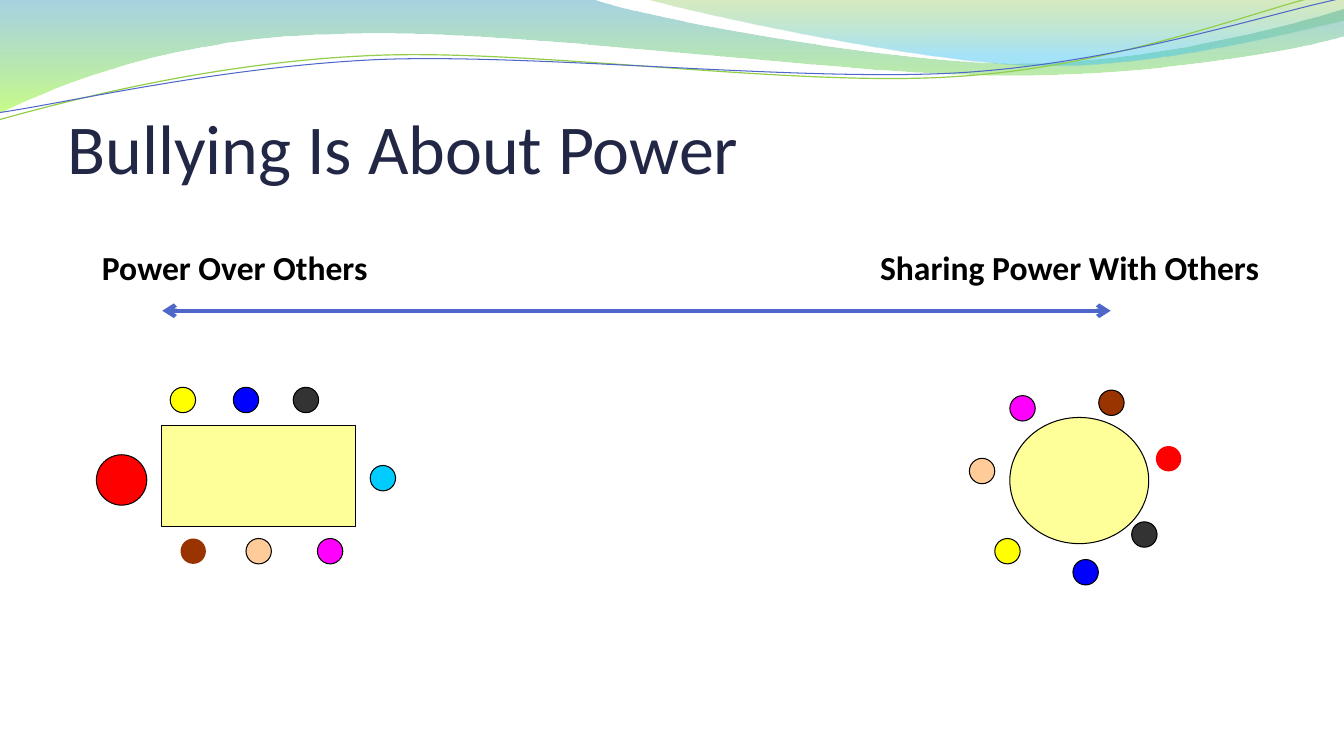
from dataclasses import dataclass
from math import cos, radians, sin

from lxml import etree
from pptx import Presentation
from pptx.dml.color import RGBColor
from pptx.enum.shapes import MSO_CONNECTOR, MSO_SHAPE
from pptx.enum.text import MSO_ANCHOR
from pptx.oxml.ns import qn
from pptx.util import Cm, Pt

RECTANGLE = MSO_SHAPE.RECTANGLE
OVAL = MSO_SHAPE.OVAL
STRAIGHT = MSO_CONNECTOR.STRAIGHT
ANCHOR_TOP = MSO_ANCHOR.TOP
ANCHOR_BOTTOM = MSO_ANCHOR.BOTTOM


@dataclass(frozen=True)
class Theme:
    font: str = "Calibri"
    title_size: float = 50
    label_size: float = 24
    outline: float = 0.75
    green_line: float = 0.85
    arrow: float = 3
    title: str = "212745"
    black: str = "000000"
    accent: str = "4E67C8"
    leaf: str = "93CE48"
    table: str = "FFFF99"
    red: str = "FF0000"
    yellow: str = "FFFF00"
    blue: str = "0000FF"
    charcoal: str = "333333"
    brown: str = "993300"
    peach: str = "FFCC99"
    magenta: str = "FF00FF"
    cyan: str = "00CCFF"
    back_wave: tuple = ((0, "3B9CBF", 45), (100, "9CFA24", 55))
    front_wave: tuple = ((0, "7EBE2C", 30), (80, "39C1F1", 45))


THEME = Theme()
SEAT_SIZE = 0.64
CURVE_TILT = 2.7

BACK_WAVE = [
    [(0, 0)],
    [(14.91, -0.03)],
    [(16.1, 0.43), (22.45, 1.6), (25.68, 1.6)],
    [(28.88, 1.6), (32.44, 0.66), (33.86, 0.23)],
    [(33.88, 0.91)],
    [(33.3, 1.12), (29.44, 1.93), (25.25, 1.9)],
    [(21.06, 1.9), (12.93, 0.71), (8.71, 0.86)],
    [(4.37, 0.91), (1.55, 2.11), (-0.05, 2.87)],
]
FRONT_WAVE = [
    [(16.21, -0.03)],
    [(17.25, 0.28), (23.09, 1.57), (26.04, 1.65)],
    [(28.96, 1.75), (32.56, 0.81), (33.86, 0.53)],
    [(33.86, 0)],
]
GREEN_LINE = [
    [(-0.03, 3.02)],
    [(1.6, 2.57), (5.33, 1.57), (9.37, 1.4)],
    [(13.39, 1.22), (20.04, 2.21), (24.1, 1.93)],
    [(28.19, 1.68), (31.78, 0.2), (33.78, -0.25)],
]
BLUE_LINE = [
    [(-0.03, 2.84)],
    [(1.57, 2.62), (5.54, 1.68), (9.58, 1.5)],
    [(13.64, 1.35), (20.22, 2.08), (24.26, 1.83)],
    [(28.3, 1.57), (31.88, 0.36), (33.86, -0.05)],
]

TOP_ROW, BOTTOM_ROW = 9.76, 13.57
LONG_TABLE_SEATS = [
    (4.29, TOP_ROW, THEME.yellow, True),
    (5.88, TOP_ROW, THEME.blue, True),
    (4.55, BOTTOM_ROW, THEME.brown, False),
    (6.2, BOTTOM_ROW, THEME.peach, True),
    (8, BOTTOM_ROW, THEME.magenta, True),
    (7.39, TOP_ROW, THEME.charcoal, True),
    (9.33, 11.73, THEME.cyan, True),
]
ROUND_TABLE_SEATS = [
    (25.45, 9.97, THEME.magenta, True),
    (24.43, 11.55, THEME.peach, True),
    (25.07, BOTTOM_ROW, THEME.yellow, True),
    (27.04, 14.1, THEME.blue, True),
    (27.69, 9.83, THEME.brown, True),
    (29.13, 11.24, THEME.red, False),
    (28.52, 13.15, THEME.charcoal, True),
]


def tilt(segments, center, degrees):
    center_x, center_y = center
    cosine, sine = cos(radians(degrees)), sin(radians(degrees))
    return [
        [(center_x + (x - center_x) * cosine - (y - center_y) * sine,
          center_y + (x - center_x) * sine + (y - center_y) * cosine)
         for x, y in segment]
        for segment in segments
    ]


def add_outline(slide, segments, close):
    points = [(Cm(x), Cm(y)) for segment in segments for x, y in segment]
    builder = slide.shapes.build_freeform(*points[0], scale=1.0)
    builder.add_line_segments(points[1:], close=close)
    shape = builder.convert_to_shape()
    shape.shadow.inherit = False
    steps = iter(list(shape._element.iter(qn("a:lnTo"))))
    for segment in segments[1:]:
        first = next(steps)
        if len(segment) == 3:
            first.tag = qn("a:cubicBezTo")
            for _ in range(2):
                step = next(steps)
                first.append(step[0])
                step.getparent().remove(step)
    return shape


def set_line(shape, color, width):
    shape.line.color.rgb = RGBColor.from_string(color)
    shape.line.width = Pt(width)


def add_wave(slide, segments, stops):
    shape = add_outline(slide, segments, True)
    shape.line.fill.background()
    shape.fill.gradient()
    gradient = shape.fill._xPr.find(qn("a:gradFill"))
    stop_list = gradient.find(qn("a:gsLst"))
    for stop in list(stop_list):
        stop_list.remove(stop)
    for position, color, opacity in stops:
        stop = etree.SubElement(stop_list, qn("a:gs"), pos=str(position * 1000))
        rgb = etree.SubElement(stop, qn("a:srgbClr"), val=color)
        etree.SubElement(rgb, qn("a:alpha"), val=str(opacity * 1000))
    gradient.find(qn("a:lin")).set("ang", "5400000")


def add_curve(slide, segments, center, color, width):
    shape = add_outline(slide, tilt(segments, center, CURVE_TILT), False)
    shape.rotation = 360 - CURVE_TILT
    shape.fill.background()
    set_line(shape, color, width)


def add_figure(slide, kind, left, top, width, height, color, outlined=True):
    shape = slide.shapes.add_shape(kind, Cm(left), Cm(top), Cm(width), Cm(height))
    shape.shadow.inherit = False
    shape.fill.solid()
    shape.fill.fore_color.rgb = RGBColor.from_string(color)
    if outlined:
        set_line(shape, THEME.black, THEME.outline)
    else:
        shape.line.fill.background()


def add_seats(slide, seats):
    for left, top, color, outlined in seats:
        add_figure(slide, OVAL, left, top, SEAT_SIZE, SEAT_SIZE, color, outlined)


def add_double_arrow(slide, left, right, y):
    connector = slide.shapes.add_connector(STRAIGHT, Cm(left), Cm(y), Cm(right), Cm(y))
    set_line(connector, THEME.accent, THEME.arrow)
    line = connector.line._get_or_add_ln()
    for end in ("a:headEnd", "a:tailEnd"):
        etree.SubElement(line, qn(end), type="arrow")
    etree.SubElement(connector._element.spPr, qn("a:effectLst"))


def add_text(slide, box, text, size, color, bold, anchor, margins):
    shape = slide.shapes.add_textbox(*(Cm(length) for length in box))
    frame = shape.text_frame
    frame.word_wrap = True
    frame.vertical_anchor = anchor
    (frame.margin_left, frame.margin_top,
     frame.margin_right, frame.margin_bottom) = (Cm(margin) for margin in margins)
    paragraph = frame.paragraphs[0]
    run = paragraph.add_run()
    run.text = text
    run.font.name = THEME.font
    run.font.size = Pt(size)
    run.font.bold = bold
    run.font.color.rgb = RGBColor.from_string(color)
    return paragraph


def add_tab_stop(paragraph, position):
    tabs = etree.SubElement(paragraph._p.get_or_add_pPr(), qn("a:tabLst"))
    etree.SubElement(tabs, qn("a:tab"), pos=str(int(Cm(position))), algn="l")


def main():
    presentation = Presentation()
    presentation.slide_width, presentation.slide_height = Cm(33.87), Cm(19.05)
    slide = presentation.slides.add_slide(presentation.slide_layouts[6])
    add_wave(slide, BACK_WAVE, THEME.back_wave)
    add_wave(slide, FRONT_WAVE, THEME.front_wave)
    add_curve(slide, GREEN_LINE, (16.89, 1.46), THEME.leaf, THEME.green_line)
    add_curve(slide, BLUE_LINE, (16.94, 1.5), THEME.accent, THEME.outline)
    add_figure(slide, RECTANGLE, 4.08, 10.72, 4.88, 2.54, THEME.table)
    add_figure(slide, OVAL, 2.43, 11.46, 1.27, 1.27, THEME.red)
    add_seats(slide, LONG_TABLE_SEATS)
    add_figure(slide, OVAL, 25.45, 10.52, 3.5, 3.18, THEME.table)
    add_seats(slide, ROUND_TABLE_SEATS)
    add_double_arrow(slide, 4.09, 27.99, 7.83)
    add_text(slide, (1.7, 1.96, 30.48, 2.79), "Bullying Is About Power",
             THEME.title_size, THEME.title, False, ANCHOR_BOTTOM, (0, 0.13, 0, 0))
    labels = add_text(slide, (2.24, 6.1, 29.95, 1.27),
                      "Power Over Others\tSharing Power With Others",
                      THEME.label_size, THEME.black, True, ANCHOR_TOP,
                      (0.33, 0.13, 0.25, 0.13))
    add_tab_stop(labels, 19.61)
    presentation.save("out.pptx")


if __name__ == "__main__":
    main()
